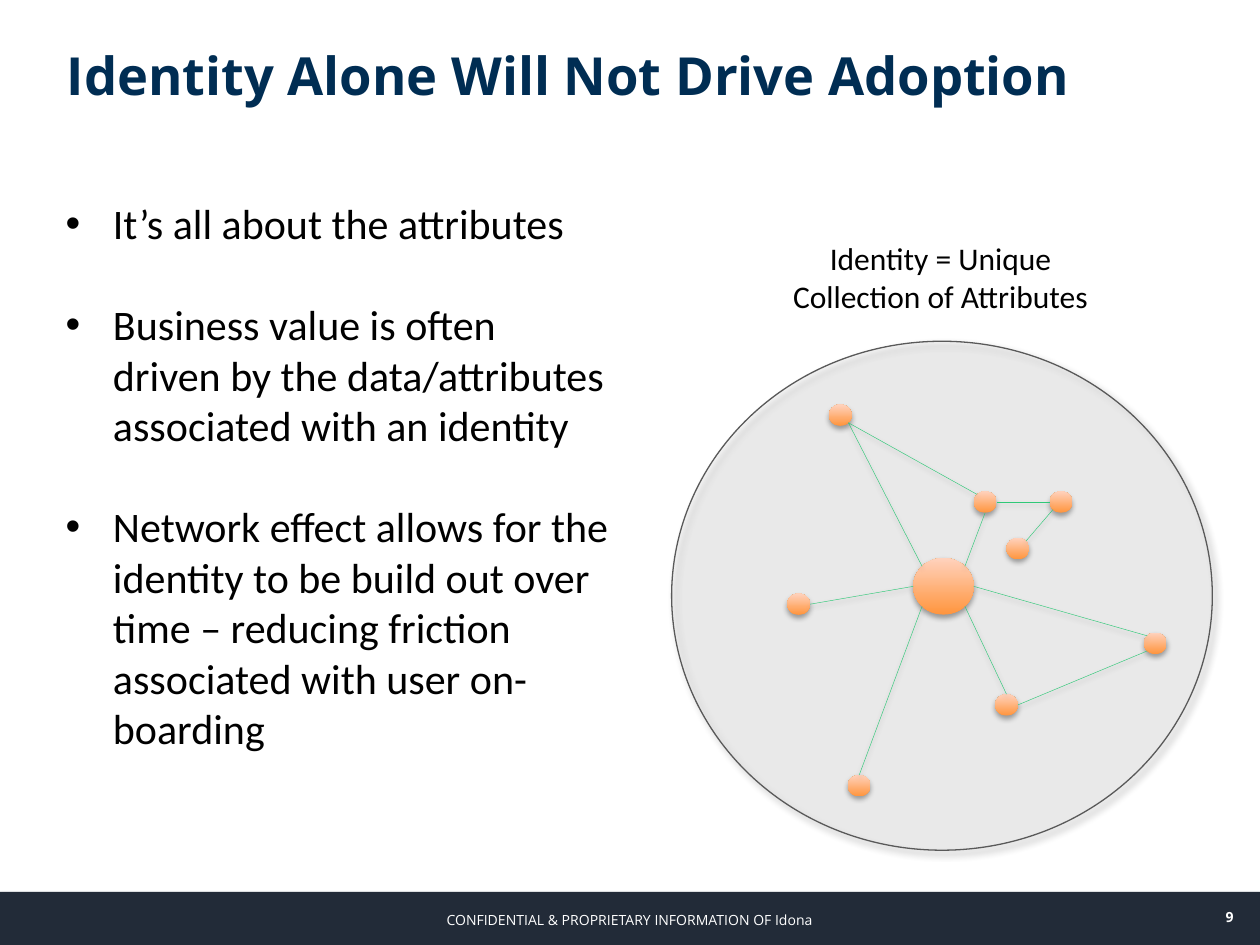
from dataclasses import dataclass
from math import cos, radians, sin

from lxml.etree import SubElement
from pptx import Presentation
from pptx.dml.color import RGBColor
from pptx.enum.shapes import MSO_CONNECTOR, MSO_SHAPE
from pptx.enum.text import MSO_ANCHOR as Anchor, MSO_AUTO_SIZE as AutoSize, PP_ALIGN as Align
from pptx.oxml.ns import qn
from pptx.util import Cm, Pt

COLORS = {
    "title": "002D53", "text": "000000", "white": "FFFFFF", "bar": "222B38",
    "circle": "D9D9D9", "outline": "595959", "link": "2FC877",
    "node_bottom": "FF953E", "node_top": "FFD2BD", "shadow": "000000",
}

# Directions on an ellipse in degrees, clockwise from the right
RIGHT, BOTTOM_RIGHT, BOTTOM, BOTTOM_LEFT, LEFT, TOP_LEFT, TOP, TOP_RIGHT = range(0, 360, 45)


@dataclass(frozen=True)
class Shadow:
    opacity: int
    blur: float
    distance: float
    angle: int


@dataclass(frozen=True)
class Node:
    x: float
    y: float
    width: float = 0.46
    height: float = 0.43

    def edge_point(self, angle: int) -> tuple:
        return (Cm(self.x + self.width / 2 * cos(radians(angle))),
                Cm(self.y + self.height / 2 * sin(radians(angle))))


@dataclass(frozen=True)
class Link:
    start: str
    start_angle: int
    end: str
    end_angle: int


CIRCLE_SHADOW = Shadow(40, 4, 3, 45)
SHAPE_SHADOW = Shadow(35, 3.1, 1.8, 90)
LINK_SHADOW = Shadow(38, 3.1, 1.6, 90)

NODES = {
    "hub": Node(19.02, 11.82, 1.22, 1.14),
    "inner": Node(19.86, 10.12),
    "upper right": Node(21.39, 10.12),
    "upper left": Node(16.94, 8.37),
    "left": Node(16.1, 12.18),
    "lower right": Node(20.29, 14.21),
    "lower left": Node(17.32, 15.84),
    "far right": Node(23.29, 12.97),
    "middle": Node(20.52, 11.06),
}
LINKS = [
    Link("upper left", BOTTOM_RIGHT, "hub", TOP_LEFT),
    Link("upper left", BOTTOM_RIGHT, "inner", TOP_LEFT),
    Link("upper right", LEFT, "inner", RIGHT),
    Link("upper right", BOTTOM_LEFT, "middle", TOP_RIGHT),
    Link("hub", TOP_RIGHT, "inner", BOTTOM),
    Link("far right", TOP_LEFT, "hub", RIGHT),
    Link("lower right", TOP, "hub", BOTTOM_RIGHT),
    Link("lower right", RIGHT, "far right", BOTTOM_LEFT),
    Link("lower left", TOP, "hub", BOTTOM_LEFT),
    Link("hub", LEFT, "left", RIGHT),
]
BULLETS = [
    "It’s all about the attributes",
    "Business value is often driven by the data/attributes associated with an identity",
    "Network effect allows for the identity to be build out over time – reducing friction "
    "associated with user on-boarding",
]


def color(name: str) -> RGBColor:
    return RGBColor.from_string(COLORS[name])


def place(shape, left: float, top: float, width: float, height: float) -> None:
    shape.left, shape.top, shape.width, shape.height = map(Cm, (left, top, width, height))


def add_shadow(shape, shadow: Shadow) -> None:
    properties = shape._element.spPr
    effects = properties.find(qn("a:effectLst"))
    if effects is None:
        effects = SubElement(properties, qn("a:effectLst"))
    outer = SubElement(effects, qn("a:outerShdw"), blurRad=str(Pt(shadow.blur)),
                       dist=str(Pt(shadow.distance)), dir=str(shadow.angle * 60000),
                       rotWithShape="0")
    shade = SubElement(outer, qn("a:srgbClr"), val=COLORS["shadow"])
    SubElement(shade, qn("a:alpha"), val=str(shadow.opacity * 1000))


def add_shape(slide, kind, left: float, top: float, width: float, height: float, shadow: Shadow):
    """Add an unlined shape with the given shadow."""
    shape = slide.shapes.add_shape(kind, *map(Cm, (left, top, width, height)))
    shape.line.fill.background()
    shape.shadow.inherit = False
    add_shadow(shape, shadow)
    return shape


def add_circle(slide) -> None:
    circle = add_shape(slide, MSO_SHAPE.OVAL, 13.54, 6.88, 10.9, 10.26, CIRCLE_SHADOW)
    circle.fill.solid()
    circle.fill.fore_color.rgb = color("circle")
    fill_color = circle._element.spPr.find(qn("a:solidFill"))[0]
    SubElement(fill_color, qn("a:alpha"), val="18000")
    circle.line.color.rgb = color("outline")
    circle.line.width = Pt(0.75)


def add_node(slide, node: Node) -> None:
    shape = add_shape(slide, MSO_SHAPE.OVAL, node.x - node.width / 2, node.y - node.height / 2,
                      node.width, node.height, SHAPE_SHADOW)
    shape.fill.gradient()
    shape.fill.gradient_angle = 90
    for stop, name in zip(shape.fill.gradient_stops, ("node_bottom", "node_top")):
        stop.color.rgb = color(name)


def add_link(slide, link: Link) -> None:
    line = slide.shapes.add_connector(
        MSO_CONNECTOR.STRAIGHT,
        *NODES[link.start].edge_point(link.start_angle),
        *NODES[link.end].edge_point(link.end_angle))
    line.line.color.rgb = color("link")
    line.line.width = Pt(0.25)
    add_shadow(line, LINK_SHADOW)


def format_text(paragraph, font: str, size: int, color_name: str, align: Align,
                bold: bool = False) -> None:
    paragraph.alignment = align
    paragraph.font.name = font
    paragraph.font.size = Pt(size)
    paragraph.font.bold = bold
    paragraph.font.color.rgb = color(color_name)


def add_label(slide, box: tuple, text: str, anchor: Anchor, *style) -> None:
    label = slide.shapes.add_textbox(*map(Cm, box))
    frame = label.text_frame
    frame.word_wrap = True
    frame.vertical_anchor = anchor
    frame.text = text
    format_text(frame.paragraphs[0], *style)


def fill_placeholders(slide) -> None:
    title, body = slide.shapes.title, slide.placeholders[1]
    place(title, 1.09, -0.08, 22.86, 3.18)
    title.text_frame.text = "Identity Alone Will Not Drive Adoption"
    title.text_frame.vertical_anchor = Anchor.MIDDLE
    format_text(title.text_frame.paragraphs[0], "Open Sans", 30, "title", Align.LEFT, True)

    place(body, 1.07, 3.86, 11.51, 13.59)
    body.text_frame.text = "\n".join(BULLETS)
    body.text_frame.auto_size = AutoSize.NONE
    for index, paragraph in enumerate(body.text_frame.paragraphs):
        paragraph.space_before = Pt(29 if index else 0)
        format_text(paragraph, "Calibri", 24, "text", Align.LEFT)


def main() -> None:
    presentation = Presentation()
    presentation.slide_width, presentation.slide_height = Cm(25.4), Cm(19.05)
    slide = presentation.slides.add_slide(presentation.slide_layouts[1])
    fill_placeholders(slide)

    add_circle(slide)
    bar = add_shape(slide, MSO_SHAPE.RECTANGLE, 0, 17.98, 25.4, 1.07, SHAPE_SHADOW)
    bar.fill.solid()
    bar.fill.fore_color.rgb = color("bar")
    add_label(slide, (4.85, 18.03, 15.7, 1.02), "CONFIDENTIAL & PROPRIETARY INFORMATION OF Idona",
              Anchor.MIDDLE, "Open Sans", 8, "white", Align.CENTER)
    add_label(slide, (23.39, 17.98, 1.73, 1.02), "9",
              Anchor.MIDDLE, "Open Sans", 8, "white", Align.RIGHT, True)

    for node in NODES.values():
        add_node(slide, node)
    for link in LINKS:
        add_link(slide, link)
    add_label(slide, (15.52, 4.7, 6.88, 1.8), "Identity = Unique Collection of Attributes",
              Anchor.TOP, "Calibri", 18, "text", Align.CENTER)
    presentation.save("out.pptx")


if __name__ == "__main__":
    main()
